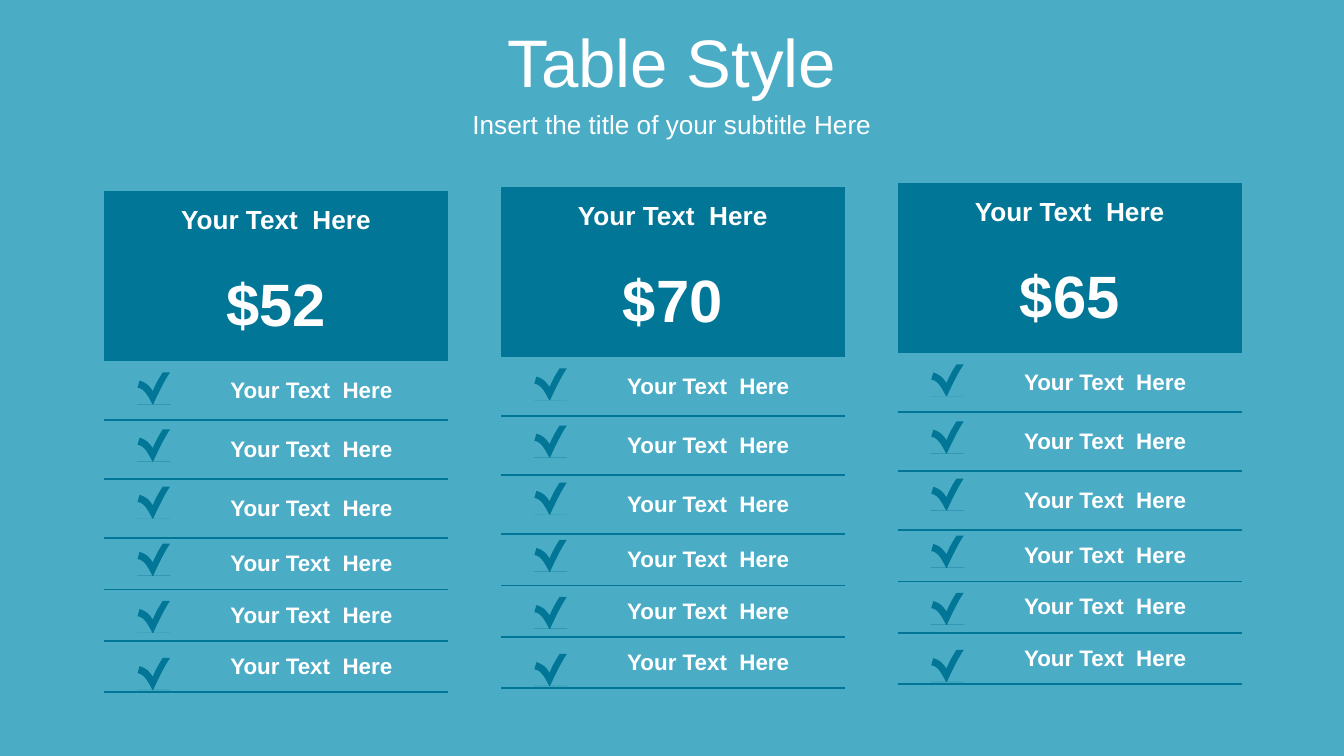
from lxml.etree import SubElement
from pptx import Presentation
from pptx.dml.color import RGBColor
from pptx.enum.text import MSO_ANCHOR, MSO_AUTO_SIZE, PP_ALIGN
from pptx.oxml import parse_xml
from pptx.oxml.ns import nsdecls, qn
from pptx.util import Pt

COLORS = {"background": "4BACC6", "accent": "027696", "text": "FFFFFF"}
FONT = "Arial"
NO_STYLE = "{2D5ABB26-0587-4C30-8999-92F81FD0307C}"

PRICES = ["$52", "$70", "$65"]
LABEL = "Your Text  Here"
FEATURES = 6
COLUMNS = [60.5, 123.8]
ROWS = [31.65, 59.5] + [31.65] * 3 + [27.5] * 3

# Check mark outline: a single pair is a line end, three pairs are a Bezier curve
CHECK_START = (13.7, 0)
CHECK_STEPS = [
    [(17.6, 0)],
    [(14.4, 4.7), (11.2, 11.5), (8.6, 17.1)],
    [(17.8, 17.1)], [(17.8, 17.2)], [(0, 17.2)], [(0, 17.1)], [(8.2, 17.1)],
    [(6.3, 13.8), (4.2, 8.6), (0.2, 8.2)],
    [(1.3, 4.4)],
    [(5.2, 5.6), (6.3, 7), (8.4, 10)],
    [(10, 6), (11.4, 3.6), (13.7, 0)],
]


def rgb(name):
    return RGBColor.from_string(COLORS[name])


def style_text(tf, text, size, bold=False, align=PP_ALIGN.LEFT):
    tf.text = text
    p = tf.paragraphs[0]
    p.alignment = align
    p.font.name, p.font.size, p.font.bold = FONT, Pt(size), bold
    p.font.color.rgb = rgb("text")


def place_heading(sp, text, size, x, y, w, h):
    sp.left, sp.top, sp.width, sp.height = Pt(x), Pt(y), Pt(w), Pt(h)
    tf = sp.text_frame
    tf.auto_size = MSO_AUTO_SIZE.NONE
    tf.vertical_anchor = MSO_ANCHOR.MIDDLE
    tf.margin_top = tf.margin_bottom = 0
    style_text(tf, text, size, align=PP_ALIGN.CENTER)


def add_check(s, x, y):
    ends = [(Pt(x + step[-1][0]), Pt(y + step[-1][1])) for step in CHECK_STEPS]
    builder = s.shapes.build_freeform(Pt(x + CHECK_START[0]),
                                      Pt(y + CHECK_START[1]))
    builder.add_line_segments(ends, close=True)
    sp = builder.convert_to_shape()
    sp.shadow.inherit = False
    sp.fill.solid()
    sp.fill.fore_color.rgb = rgb("accent")
    sp.line.fill.background()

    # Bend the curved segments
    segments = list(sp._element.iter(qn("a:lnTo")))
    for segment, step in zip(segments, CHECK_STEPS):
        if len(step) == 3:
            bend = parse_xml(f'<a:cubicBezTo {nsdecls("a")}/>')
            for px, py in step:
                SubElement(bend, qn("a:pt"), x=str(Pt(px)), y=str(Pt(py)))
            segment.getparent().replace(segment, bend)


def underline(cell):
    cell._tc.get_or_add_tcPr().insert(0, parse_xml(
        f'<a:lnB {nsdecls("a")} w="12700"><a:solidFill>'
        f'<a:srgbClr val="{COLORS["accent"]}"/></a:solidFill></a:lnB>'))


def add_price_column(s, price, x, y):
    frame = s.shapes.add_table(len(ROWS), len(COLUMNS), Pt(x), Pt(y),
                               Pt(sum(COLUMNS)), Pt(sum(ROWS)))
    table = frame.table
    table.first_row = table.horz_banding = False
    next(frame._element.iter(qn("a:tableStyleId"))).text = NO_STYLE
    for column, width in zip(table.columns, COLUMNS):
        column.width = Pt(width)
    for row, height in zip(table.rows, ROWS):
        row.height = Pt(height)
    for cell in table.iter_cells():
        cell.margin_top = cell.margin_bottom = 0
        cell.vertical_anchor = MSO_ANCHOR.MIDDLE

    # Header and price
    for row, (text, size) in enumerate([(LABEL, 14), (price, 32)]):
        cell = table.cell(row, 0)
        cell.merge(table.cell(row, 1))
        cell.fill.solid()
        cell.fill.fore_color.rgb = rgb("accent")
        style_text(cell.text_frame, text, size, True, PP_ALIGN.CENTER)

    # Feature rows with their check marks
    for i in range(FEATURES):
        style_text(table.cell(i + 2, 1).text_frame, LABEL, 12, True)
        for column in range(len(COLUMNS)):
            cell = table.cell(i + 2, column)
            cell.fill.background()
            underline(cell)
        add_check(s, x + 17.8, y + 97.2 + i * 30.6)


def main():
    prs = Presentation()
    prs.slide_width, prs.slide_height = Pt(720), Pt(405)
    s = prs.slides.add_slide(prs.slide_layouts[0])
    s.background.fill.solid()
    s.background.fill.fore_color.rgb = rgb("background")

    # Title and subtitle
    place_heading(s.shapes.title, "Table Style", 36, 0, 10, 720, 45)
    place_heading(s.placeholders[1], "Insert the title of your subtitle Here",
                  14, 0, 55.4, 720, 22)

    # Price columns
    for i, price in enumerate(PRICES):
        add_price_column(s, price, 55.7 + i * 212.6, 102.3 - i * 2.15)

    prs.save("out.pptx")


if __name__ == "__main__":
    main()
